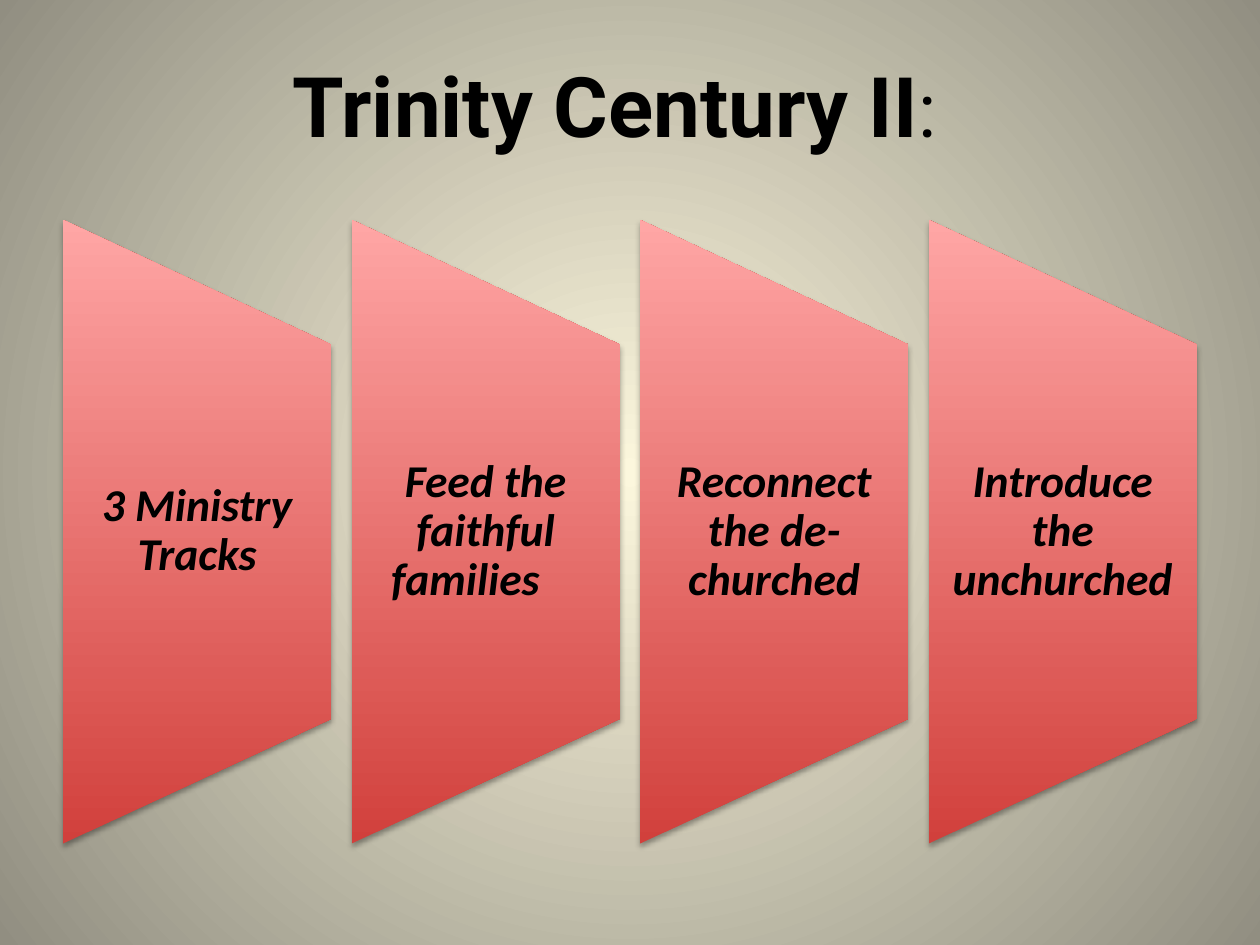
from lxml import etree
from pptx import Presentation
from pptx import util as u
from pptx.dml.color import RGBColor
from pptx.enum import shapes, text
from pptx.oxml import parse_xml

NS = 'xmlns:a="http://schemas.openxmlformats.org/drawingml/2006/main"'
SHADOW = f"""<a:effectLst {NS}>
  <a:outerShdw blurRad="39370" dist="22860" dir="5400000" rotWithShape="0">
    <a:srgbClr val="000000"><a:alpha val="35000"/></a:srgbClr>
  </a:outerShdw></a:effectLst>"""
RADIAL = f"""<a:path {NS} path="circle">
  <a:fillToRect l="50000" t="50000" r="50000" b="50000"/></a:path>"""


def set_gradient(fill, start, end):
    """Fill from start to end, upwards, and return the gradient's element."""
    fill.gradient()
    fill.gradient_angle = 90
    for stop, position, color in zip(fill.gradient_stops, (0, 1), (start, end)):
        stop.position = position
        stop.color.rgb = RGBColor.from_string(color)
    return fill._xPr.find(".//{*}gradFill")


def add_text(s, box, runs, font, inset=(0.1, 0.05), spacing=1.0, italic=False, color="000000"):
    """Add a centred text box; runs holds (wording, size, bold) tuples."""
    tf = s.shapes.add_textbox(*[u.Inches(v) for v in box]).text_frame
    tf.word_wrap = True
    tf.vertical_anchor = text.MSO_ANCHOR.MIDDLE
    tf.margin_left = tf.margin_right = u.Inches(inset[0])
    tf.margin_top = tf.margin_bottom = u.Inches(inset[1])
    p = tf.paragraphs[0]
    p.alignment = text.PP_ALIGN.CENTER
    p.line_spacing = spacing
    for wording, size, bold in runs:
        r = p.add_run()
        r.text = wording
        r.font.name, r.font.size = font, u.Pt(size)
        r.font.bold, r.font.italic = bold, italic
        r.font.color.rgb = RGBColor.from_string(color)


prs = Presentation()
prs.slide_width, prs.slide_height = u.Inches(10), u.Inches(7.5)
s = prs.slides.add_slide(prs.slide_layouts[6])

backdrop = set_gradient(s.background.fill, "FCF7DD", "918E81")
backdrop.replace(backdrop.find("{*}lin"), parse_xml(RADIAL))

add_text(s, (0.38, 0.39, 9, 0.87),
         [("Trinity Century II", 47.7, True), (":", 43.2, False)], "Roboto")

# Four equal columns; each panel is a trapezoid turned on its side.
LEFT, PITCH, WIDTH, HEIGHT, MIDDLE = 0.5, 2.29, 2.13, 4.95, 4.22
TEXT_HEIGHT = HEIGHT * 0.6
tracks = ["3 Ministry Tracks", "Feed the faithful families\t",
          "Reconnect the de-churched", "Introduce the unchurched"]

for column, track in enumerate(tracks):
    x = LEFT + column * PITCH
    sp = s.shapes.add_shape(
        shapes.MSO_SHAPE.FLOWCHART_MANUAL_OPERATION,
        u.Inches(x + (WIDTH - HEIGHT) / 2), u.Inches(MIDDLE - WIDTH / 2),
        u.Inches(HEIGHT), u.Inches(WIDTH))
    sp.rotation = 270
    set_gradient(sp.fill, "D1403C", "FFA6A5").set("rotWithShape", "0")
    sp.line.fill.background()
    sp._element.spPr.append(parse_xml(SHADOW))
    add_text(s, (x, MIDDLE - TEXT_HEIGHT / 2, WIDTH, TEXT_HEIGHT),
             [(track, 26, True)], "Calibri", inset=(0.18, 0), spacing=0.9, italic=True)

prs.save("out.pptx")
